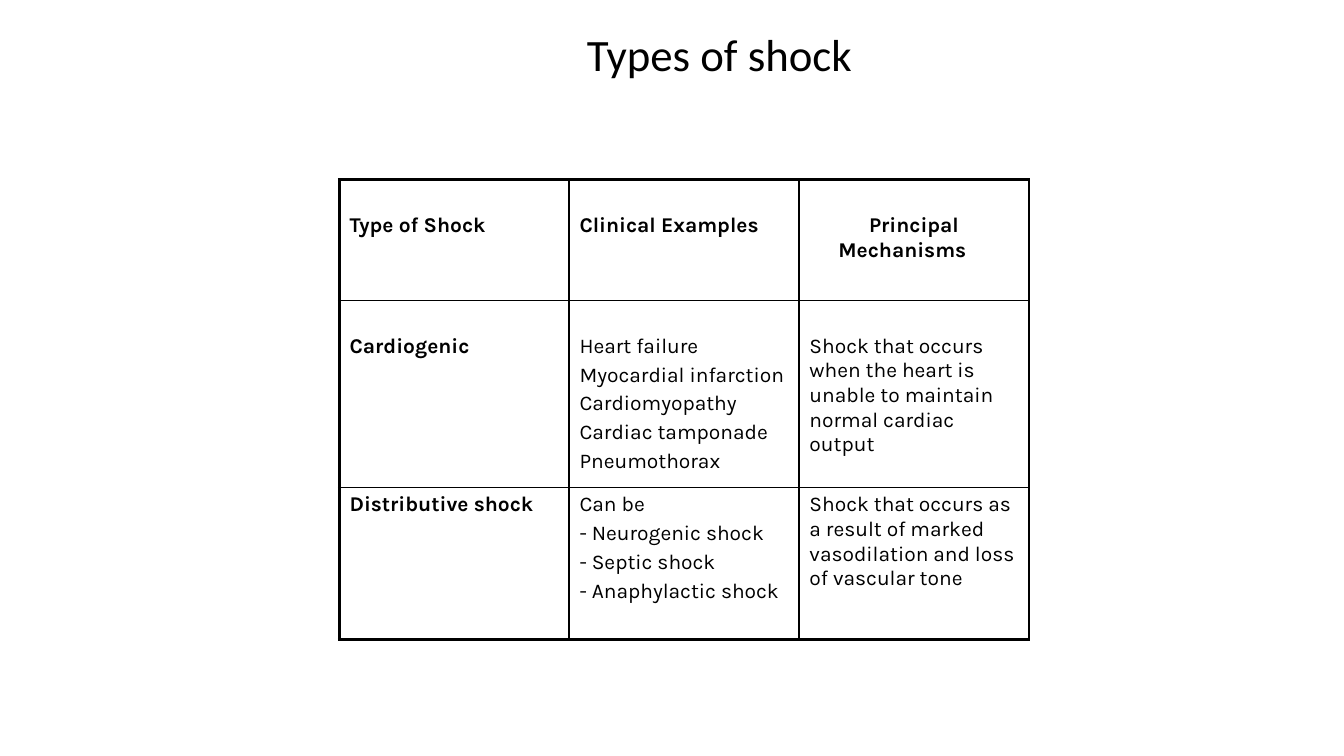
from dataclasses import dataclass

from lxml.etree import SubElement
from pptx import Presentation
from pptx.dml.color import RGBColor
from pptx.enum.text import MSO_ANCHOR, PP_ALIGN
from pptx.oxml.ns import qn
from pptx.util import Emu, Pt

EMU_PER_PX = 9525
BLACK = RGBColor(0x00, 0x00, 0x00)
COLUMN_WIDTH = 219
ROW_HEIGHTS = (115, 178, 145)
ROW_TOP_MARGINS = (32, 32, 5)
INNER_BORDER, OUTER_BORDER = Pt(1), Pt(2.25)


@dataclass(frozen=True)
class CellText:
    lines: tuple[str, ...]
    bold: bool = False
    alignment: PP_ALIGN = PP_ALIGN.LEFT


ROWS = (
    (
        CellText(("Type of Shock",), bold=True),
        CellText(("Clinical Examples",), bold=True),
        CellText(("Principal Mechanisms\t",), bold=True, alignment=PP_ALIGN.CENTER),
    ),
    (
        CellText(("Cardiogenic",), bold=True),
        CellText((
            "Heart failure",
            "Myocardial infarction",
            "Cardiomyopathy",
            "Cardiac tamponade",
            "Pneumothorax",
        )),
        CellText((
            "Shock that occurs when the heart is unable to maintain normal cardiac output",
        )),
    ),
    (
        CellText(("Distributive shock",), bold=True),
        CellText((
            "Can be",
            "- Neurogenic shock",
            "- Septic shock",
            "- Anaphylactic shock",
        )),
        CellText((
            "Shock that occurs as a result of marked vasodilation and loss of vascular tone",
        )),
    ),
)


def px(length: int) -> Emu:
    return Emu(length * EMU_PER_PX)


def format_runs(paragraph, font_name: str, size: float, bold: bool = False) -> None:
    for run in paragraph.runs:
        run.font.name = font_name
        run.font.size = Pt(size)
        run.font.bold = bold
        run.font.color.rgb = BLACK


def add_title(slide) -> None:
    title = slide.shapes.add_textbox(px(281), px(22), px(818), px(65))
    text_frame = title.text_frame
    text_frame.word_wrap = True
    text_frame.vertical_anchor = MSO_ANCHOR.MIDDLE
    text_frame.text = "Types of shock "
    paragraph = text_frame.paragraphs[0]
    paragraph.alignment = PP_ALIGN.CENTER
    paragraph.line_spacing = 0.9
    format_runs(paragraph, "Calibri", 32)


def set_borders(cell, row: int, column: int) -> None:
    """Draw thick lines on the table's outer edge and thin ones inside."""
    properties = cell._tc.get_or_add_tcPr()
    on_outer_edge = {
        "a:lnL": column == 0,
        "a:lnR": column == len(ROWS[0]) - 1,
        "a:lnT": row == 0,
        "a:lnB": row == len(ROWS) - 1,
    }
    for position, (tag, is_outer) in enumerate(on_outer_edge.items()):
        line = SubElement(properties, qn(tag))
        line.set("w", str(OUTER_BORDER if is_outer else INNER_BORDER))
        fill = SubElement(line, qn("a:solidFill"))
        SubElement(fill, qn("a:srgbClr")).set("val", str(BLACK))
        properties.insert(position, line)


def fill_cell(cell, content: CellText, top_margin: int) -> None:
    cell.fill.background()
    cell.margin_left = cell.margin_right = px(10)
    cell.margin_top, cell.margin_bottom = px(top_margin), px(5)
    cell.text_frame.text = "\n".join(content.lines)
    for index, paragraph in enumerate(cell.text_frame.paragraphs):
        paragraph.alignment = content.alignment
        if index > 0:
            paragraph.space_before = Pt(3)
        format_runs(paragraph, "Karla", 15, content.bold)


def add_shock_table(slide) -> None:
    column_count = len(ROWS[0])
    frame = slide.shapes.add_table(
        len(ROWS), column_count, px(323), px(171),
        px(COLUMN_WIDTH * column_count), px(sum(ROW_HEIGHTS)),
    )
    table = frame.table
    table.first_row = table.horz_banding = False
    for column in table.columns:
        column.width = px(COLUMN_WIDTH)
    for row, contents in enumerate(ROWS):
        table.rows[row].height = px(ROW_HEIGHTS[row])
        for column, content in enumerate(contents):
            cell = table.cell(row, column)
            fill_cell(cell, content, ROW_TOP_MARGINS[row])
            set_borders(cell, row, column)


def main() -> None:
    presentation = Presentation()
    presentation.slide_width, presentation.slide_height = px(1280), px(720)
    slide = presentation.slides.add_slide(presentation.slide_layouts[6])
    add_title(slide)
    add_shock_table(slide)
    presentation.save("out.pptx")


if __name__ == "__main__":
    main()
